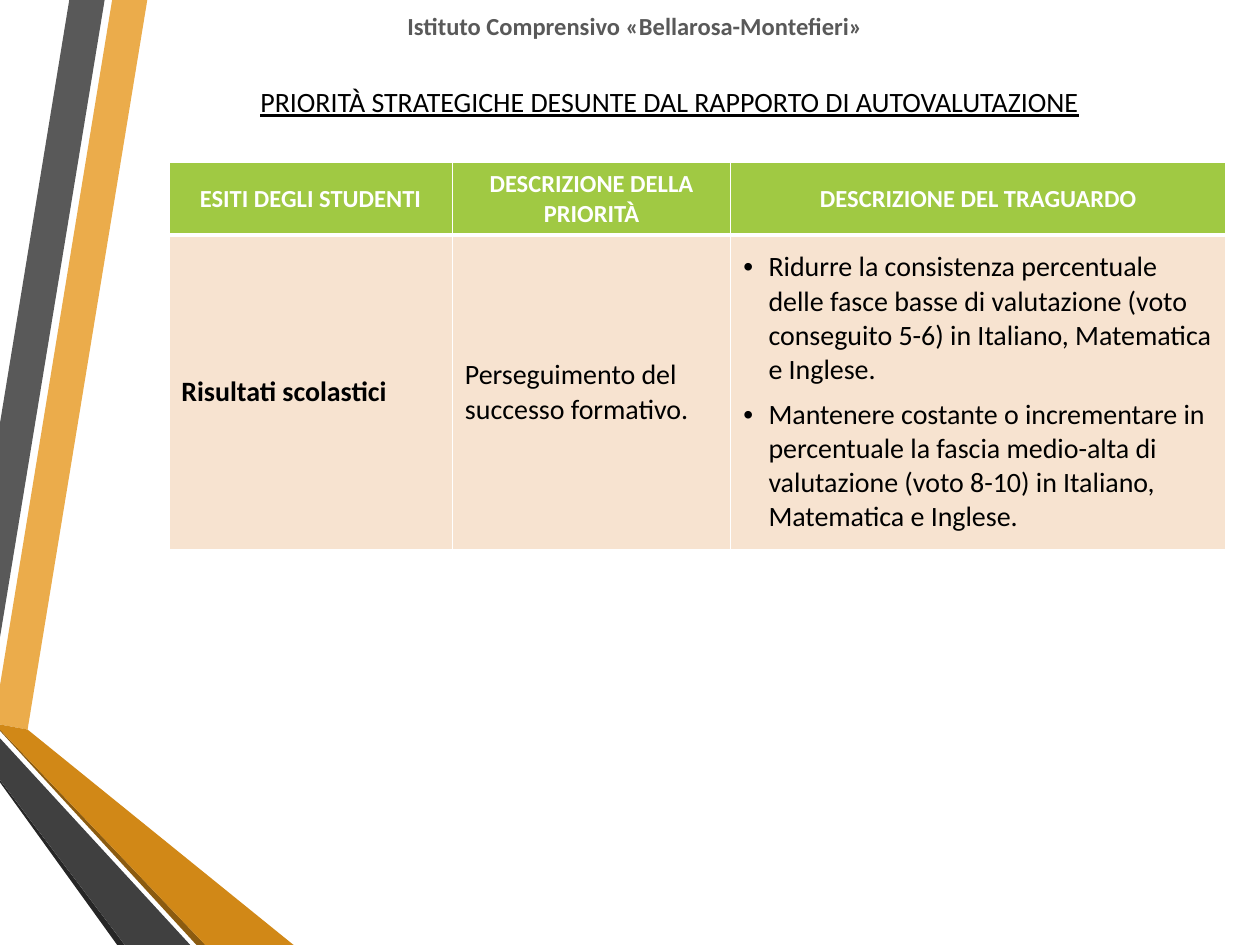
import pptx
import pptx.util
import pptx.dml.color
import pptx.enum.text
import pptx.oxml.ns
from lxml import etree

Pt = pptx.util.Pt
ALIGN = pptx.enum.text.PP_ALIGN
ANCHOR = pptx.enum.text.MSO_ANCHOR
FONT = "Calibri"
COLORS = {
    "text": "000000", "white": "FFFFFF", "grey": "595959",
    "header": "A0C943", "body": "F7E3D0",
    "amber": "EBAC4B", "orange": "D18817", "brown": "8B5B10",
    "charcoal": "404040", "black": "262626",
}
# Outlines in points from the top left of the decoration's box
RIBBONS = [
    ("amber", [(0, 391.7), (0, 414), (15.8, 416.9), (84.2, 0), (64.1, 0)]),
    ("grey", [(59.8, 0), (39.6, 0), (0, 241.9), (0, 364.3)]),
    ("black", [(0, 445.7), (0, 447.1), (67, 540), (71.3, 540)]),
    ("brown", [(0, 416.9), (0, 417.6), (112.3, 540), (117.4, 540)]),
    ("orange", [(0, 416.9), (117.4, 540), (167.8, 540), (15.8, 416.9), (0, 414)]),
    ("charcoal", [(0, 445.7), (71.3, 540), (108.7, 540), (0, 421.9)]),
]
COLUMN_WIDTHS = [162, 159.1, 283]
HEADER_HEIGHT, BODY_HEIGHT = 41, 180
HEADERS = ["ESITI DEGLI STUDENTI", "DESCRIZIONE DELLA PRIORITÀ", "DESCRIZIONE DEL TRAGUARDO"]
BODY = [
    ["Risultati scolastici"],
    ["Perseguimento del successo formativo."],
    ["Ridurre la consistenza percentuale delle fasce basse di valutazione "
     "(voto conseguito 5-6) in Italiano, Matematica e Inglese.",
     "Mantenere costante o incrementare in percentuale la fascia medio-alta di "
     "valutazione (voto 8-10) in Italiano, Matematica e Inglese."],
]


def color(name):
    return pptx.dml.color.RGBColor.from_string(COLORS[name])


def format_para(para, size, ink, align=ALIGN.LEFT, bold=False, underline=False):
    para.alignment = align
    font = para.font
    font.name, font.size = FONT, Pt(size)
    font.bold, font.underline = bold, underline
    font.color.rgb = color(ink)


def add_ribbons(page, left, top):
    for fill, points in RIBBONS:
        corners = [(Pt(left + x), Pt(top + y)) for x, y in points]
        builder = page.shapes.build_freeform(*corners[0])
        builder.add_line_segments(corners[1:], close=True)
        ribbon = builder.convert_to_shape()
        ribbon.shadow.inherit = False
        ribbon.fill.solid()
        ribbon.fill.fore_color.rgb = color(fill)
        ribbon.line.fill.background()


def place_heading(shape, text, left, top, width, height, **style):
    """Position a title or text box and fill it with one centred line."""
    shape.left, shape.top, shape.width, shape.height = map(Pt, (left, top, width, height))
    frame = shape.text_frame
    frame.text = text
    frame.word_wrap = True
    frame.auto_size = pptx.enum.text.MSO_AUTO_SIZE.NONE
    frame.vertical_anchor = ANCHOR.TOP
    format_para(frame.paragraphs[0], align=ALIGN.CENTER, **style)


def set_borders(cell, top, bottom):
    """Draw white borders, 1 pt at the sides and as given above and below."""
    properties = cell._tc.get_or_add_tcPr()
    for side, width in (("L", 1), ("R", 1), ("T", top), ("B", bottom)):
        line = etree.SubElement(properties, pptx.oxml.ns.qn(f"a:ln{side}"), w=str(Pt(width)))
        fill = etree.SubElement(line, pptx.oxml.ns.qn("a:solidFill"))
        etree.SubElement(fill, pptx.oxml.ns.qn("a:srgbClr"), val=COLORS["white"])


def add_bullet(para):
    properties = para._p.get_or_add_pPr()
    properties.set("marL", str(Pt(14.4)))
    properties.set("indent", str(-Pt(14.4)))
    para.space_after = Pt(6)
    etree.SubElement(properties, pptx.oxml.ns.qn("a:buFont"), typeface="Arial")
    etree.SubElement(properties, pptx.oxml.ns.qn("a:buChar"), char="•")


def fill_cell(cell, lines, fill, top, bottom, **style):
    set_borders(cell, top, bottom)
    cell.fill.solid()
    cell.fill.fore_color.rgb = color(fill)
    cell.vertical_anchor = ANCHOR.MIDDLE
    cell.text_frame.text = "\n".join(lines)
    for para in cell.text_frame.paragraphs:
        if len(lines) > 1:
            add_bullet(para)
        format_para(para, **style)


def add_priority_table(page, left, top):
    frame = page.shapes.add_table(
        2, len(HEADERS), Pt(left), Pt(top),
        Pt(sum(COLUMN_WIDTHS)), Pt(HEADER_HEIGHT + BODY_HEIGHT))
    table = frame.table
    table.rows[0].height, table.rows[1].height = Pt(HEADER_HEIGHT), Pt(BODY_HEIGHT)
    for index, width in enumerate(COLUMN_WIDTHS):
        table.columns[index].width = Pt(width)
        fill_cell(table.cell(0, index), [HEADERS[index]], "header", top=1, bottom=3,
                  size=14, ink="white", align=ALIGN.CENTER, bold=True)
        fill_cell(table.cell(1, index), BODY[index], "body", top=3, bottom=1,
                  size=16, ink="text", bold=index == 0)


def main():
    deck = pptx.Presentation()
    deck.slide_width, deck.slide_height = Pt(720), Pt(540)
    page = deck.slides.add_slide(deck.slide_layouts[5])
    add_ribbons(page, 0, 0)
    place_heading(page.shapes.title,
                  "PRIORITÀ STRATEGICHE DESUNTE DAL RAPPORTO DI AUTOVALUTAZIONE",
                  87.8, 44.6, 589.7, 26.6, size=16, ink="text", underline=True)
    add_priority_table(page, 96.5, 92.9)
    school = page.shapes.add_textbox(0, 0, 0, 0)
    place_heading(school, "Istituto Comprensivo «Bellarosa-Montefieri»",
                  82.1, 2.9, 561.6, 24.5, size=14, ink="grey", bold=True)
    deck.save("out.pptx")


if __name__ == "__main__":
    main()
